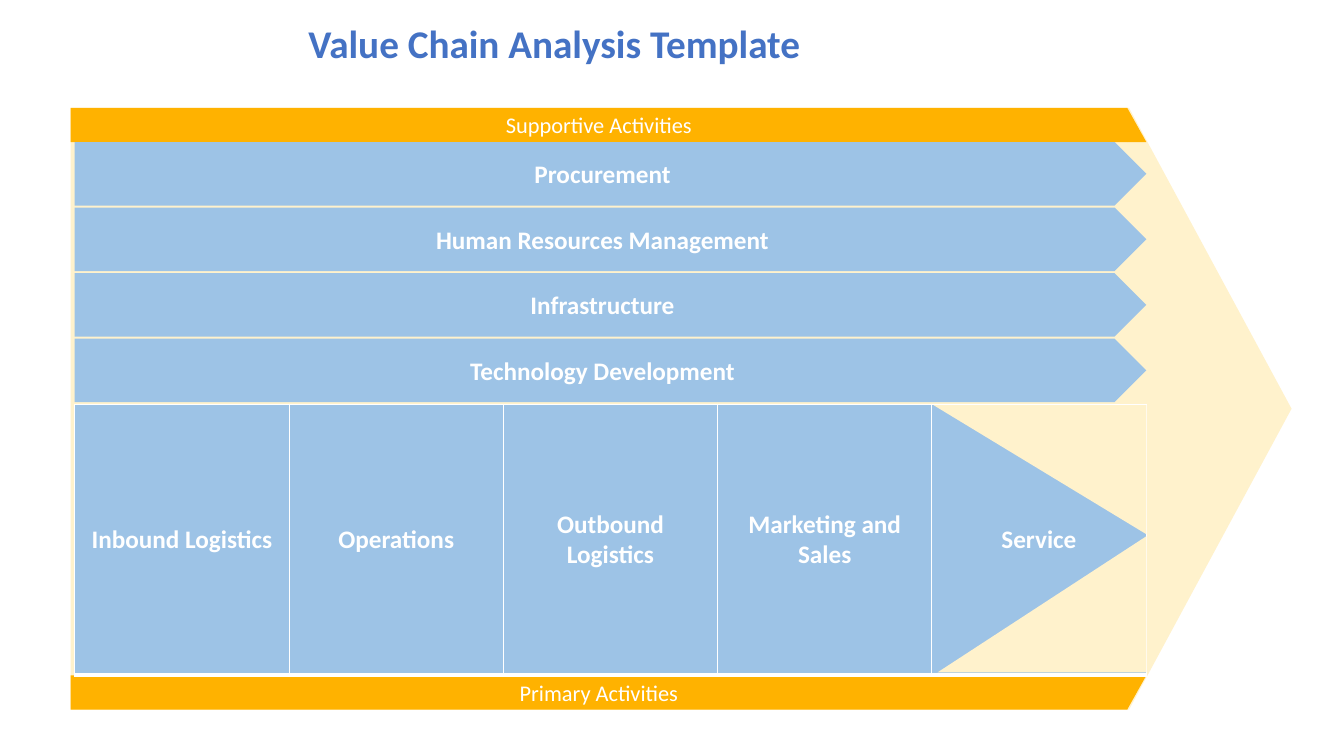
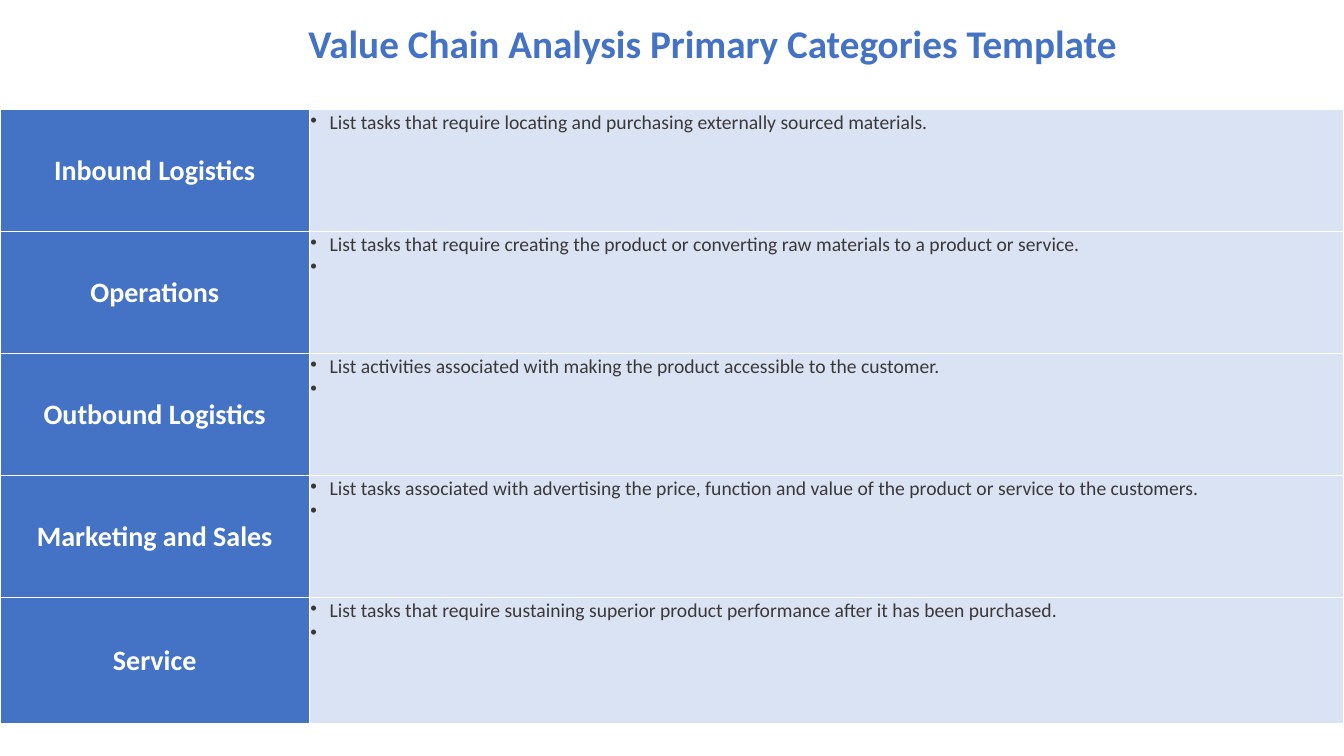
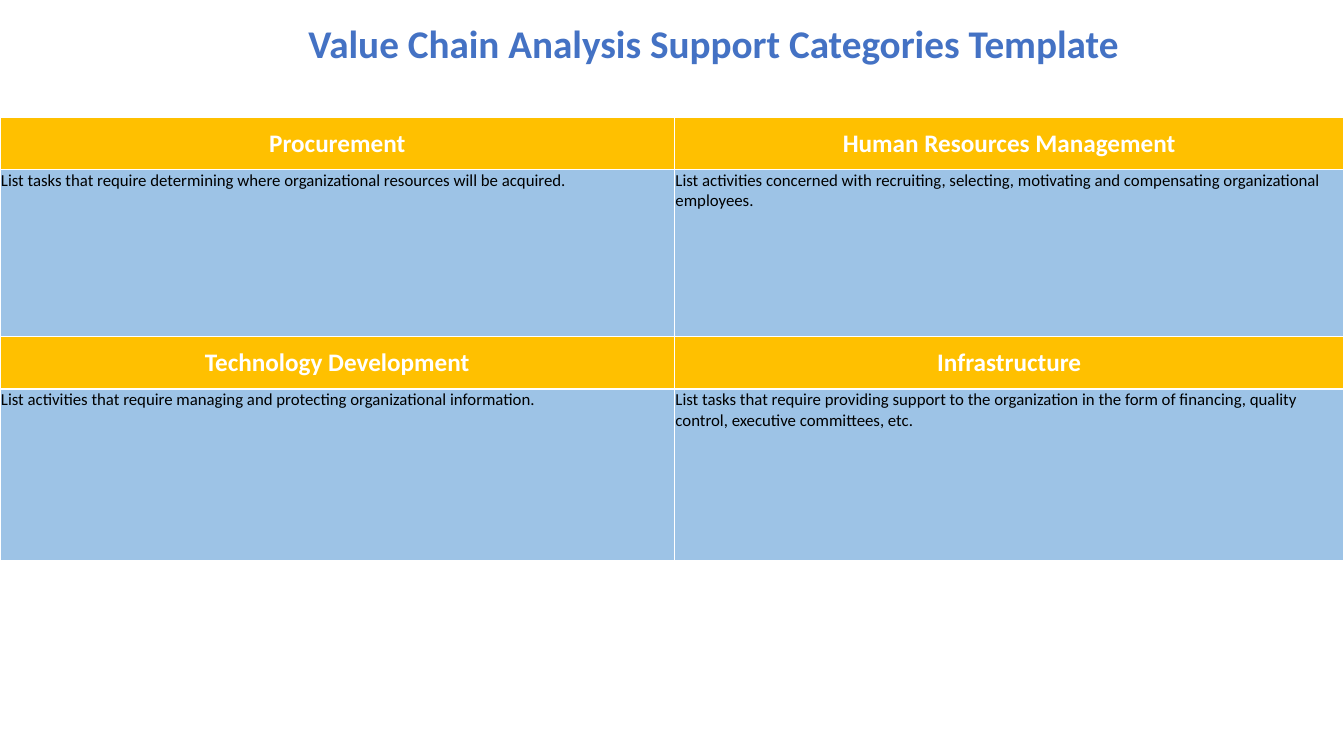
import pptx
import pptx.dml.color
import pptx.enum.shapes
import pptx.enum.text
import pptx.oxml
import pptx.oxml.ns
import pptx.util

PX = 9144  # one px is a hundredth of an inch
SLIDE_W, SLIDE_H = 1333, 750
FONT = "Calibri"
COLORS = {
    "blue": "4472C4",
    "sky": "9DC3E6",
    "pale": "DAE3F3",
    "cream": "FFF2CC",
    "amber": "FFB200",
    "gold": "FFC000",
    "ink": "3B3838",
    "black": "000000",
    "white": "FFFFFF",
}
EMPTY_ITEM = chr(160)  # keeps the bullet of an unfilled list item visible
SHAPE = pptx.enum.shapes.MSO_SHAPE
MIDDLE = pptx.enum.text.MSO_ANCHOR.MIDDLE
TOP = pptx.enum.text.MSO_ANCHOR.TOP
CENTER = pptx.enum.text.PP_ALIGN.CENTER
LEFT = pptx.enum.text.PP_ALIGN.LEFT

SUPPORT = ["Procurement", "Human Resources Management",
           "Infrastructure", "Technology Development"]
PRIMARY = {
    "Inbound Logistics": [
        "List tasks that require locating and purchasing externally sourced materials."],
    "Operations": [
        "List tasks that require creating the product or converting raw materials "
        "to a product or service.", EMPTY_ITEM],
    "Outbound Logistics": [
        "List activities associated with making the product accessible to the customer.",
        EMPTY_ITEM],
    "Marketing and Sales": [
        "List tasks associated with advertising the price, function and value of the "
        "product or service to the customers.", EMPTY_ITEM],
    "Service": [
        "List tasks that require sustaining superior product performance after it has "
        "been purchased.", EMPTY_ITEM],
}
SUPPORT_TASKS = [
    [("Procurement",
      "List tasks that require determining where organizational resources will be acquired."),
     ("Human Resources Management",
      "List activities concerned with recruiting, selecting, motivating and compensating "
      "organizational employees.")],
    [("Technology Development",
      "List activities that require managing and protecting organizational information."),
     ("Infrastructure",
      "List tasks that require providing support to the organization in the form of "
      "financing, quality control, executive committees, etc.")],
]


def px(*lengths):
    return [pptx.util.Emu(length * PX) for length in lengths]


def rgb(name):
    return pptx.dml.color.RGBColor.from_string(COLORS[name])


def add_xml(parent, index, xml):
    parent.insert(index, pptx.oxml.parse_xml(
        xml.replace(">", " " + pptx.oxml.ns.nsdecls("a") + ">", 1)))


# Text
def write(frame, lines, size, color, bold=False, align=LEFT, bullet=False, spacing=None):
    for number, line in enumerate(lines):
        paragraph = frame.paragraphs[0] if number == 0 else frame.add_paragraph()
        paragraph.text = line
        paragraph.alignment = align
        if spacing:
            paragraph.line_spacing = spacing
        if bullet:
            properties = paragraph.alignment is not None and paragraph._p.get_or_add_pPr()
            properties.set("marL", str(19 * PX))
            properties.set("indent", str(-19 * PX))
            add_xml(properties, len(properties), '<a:buChar char="•"></a:buChar>')
        font = paragraph.font
        font.name, font.size, font.bold = FONT, pptx.util.Pt(size), bold
        font.color.rgb = rgb(color)


def add_title(slide, text):
    frame = slide.shapes.add_textbox(*px(296, 15, 1027, 60)).text_frame
    frame.word_wrap = True
    frame.vertical_anchor = MIDDLE
    write(frame, [text], 28, "blue", bold=True, spacing=0.9)


# Shapes
def add_block(slide, kind, box, fill, flips=""):
    block = slide.shapes.add_shape(kind, *px(*box))
    block.shadow.inherit = False
    block.fill.solid()
    block.fill.fore_color.rgb = rgb(fill)
    block.line.fill.background()
    for axis in flips:
        block._element.spPr.xfrm.set("flip" + axis, "1")
    return block


def add_label(block, text, size, bold=False):
    block.text_frame.word_wrap = True
    block.text_frame.vertical_anchor = MIDDLE
    write(block.text_frame, [text], size, "white", bold, CENTER)


def add_band(slide, top, text, flips=""):
    add_label(add_block(slide, SHAPE.RECTANGLE, (70, top, 1048, 34), "amber"), text, 16)
    add_block(slide, SHAPE.RIGHT_TRIANGLE, (1118, top, 19, 34), "amber", flips)


# Tables
def add_grid(slide, left, top, widths, heights):
    frame = slide.shapes.add_table(
        len(heights), len(widths), *px(left, top, sum(widths), sum(heights)))
    table = frame.table
    table.first_row = table.horz_banding = False
    for column, width in zip(table.columns, px(*widths)):
        column.width = width
    for row, height in zip(table.rows, px(*heights)):
        row.height = height
    return table


def fill_cell(cell, lines, fill, size, color="white", heading=True, bullet=False,
              tight=True, bottom_line=1):
    if tight:
        cell.margin_left, cell.margin_right, cell.margin_top, cell.margin_bottom = px(1, 1, 1, 0)
    cell.vertical_anchor = MIDDLE if heading else TOP
    cell.fill.solid()
    cell.fill.fore_color.rgb = rgb(fill)
    for index, (side, points) in enumerate(zip("LRTB", (1, 1, 1, bottom_line))):
        add_xml(cell._tc.get_or_add_tcPr(), index,
                f'<a:ln{side} w="{points * 12700}"><a:solidFill>'
                f'<a:srgbClr val="{COLORS["white"]}"/></a:solidFill></a:ln{side}>')
    write(cell.text_frame, lines, size, color, heading, CENTER if heading else LEFT, bullet)


# Slides
def build_value_chain(slide):
    margin = add_block(slide, SHAPE.PENTAGON, (70, 107, 1211, 597), "cream")
    margin.adjustments[0] = 0.27
    add_title(slide, "Value Chain Analysis Template")
    add_band(slide, 107, "Supportive Activities")
    add_band(slide, 670, "Primary Activities", "V")
    for row, activity in enumerate(SUPPORT):
        arrow = add_block(slide, SHAPE.PENTAGON, (74, 141 + 65 * row, 1063, 63), "sky")
        add_label(arrow, activity, 18, bold=True)

    edges = [round(1063 * i / len(PRIMARY)) for i in range(len(PRIMARY) + 1)]
    widths = [right - left for left, right in zip(edges, edges[1:])]
    activities = add_grid(slide, 74, 401, widths, [269])
    for column, activity in enumerate(PRIMARY):
        fill_cell(activities.cell(0, column), [activity], "sky", 18,
                  tight=False, bottom_line=3)
    # Corners that turn the last cell into an arrow point
    add_block(slide, SHAPE.RIGHT_TRIANGLE, (926, 402, 211, 128), "cream", "HV")
    add_block(slide, SHAPE.RIGHT_TRIANGLE, (930, 532, 207, 135), "cream", "H")


def build_primary_categories(slide):
    add_title(slide, "Value Chain Analysis Primary Categories Template")
    categories = add_grid(slide, 0, 109, [307, SLIDE_W - 307], [121] * 4 + [125])
    for row, (activity, tasks) in enumerate(PRIMARY.items()):
        fill_cell(categories.cell(row, 0), [activity], "blue", 20)
        fill_cell(categories.cell(row, 1), tasks, "pale", 14, "ink",
                  heading=False, bullet=True)


def build_support_categories(slide):
    add_title(slide, "Value Chain Analysis Support Categories Template")
    categories = add_grid(slide, 0, 116, [669, SLIDE_W - 669], [52, 166, 52, 170])
    for pair, row in enumerate(SUPPORT_TASKS):
        for column, (activity, task) in enumerate(row):
            fill_cell(categories.cell(2 * pair, column), [activity], "gold", 18)
            fill_cell(categories.cell(2 * pair + 1, column), [task], "sky", 12, "black",
                      heading=False)


def main():
    deck = pptx.Presentation()
    deck.slide_width, deck.slide_height = px(SLIDE_W, SLIDE_H)
    for build in (build_value_chain, build_primary_categories, build_support_categories):
        build(deck.slides.add_slide(deck.slide_layouts[6]))
    deck.save("out.pptx")


if __name__ == "__main__":
    main()
